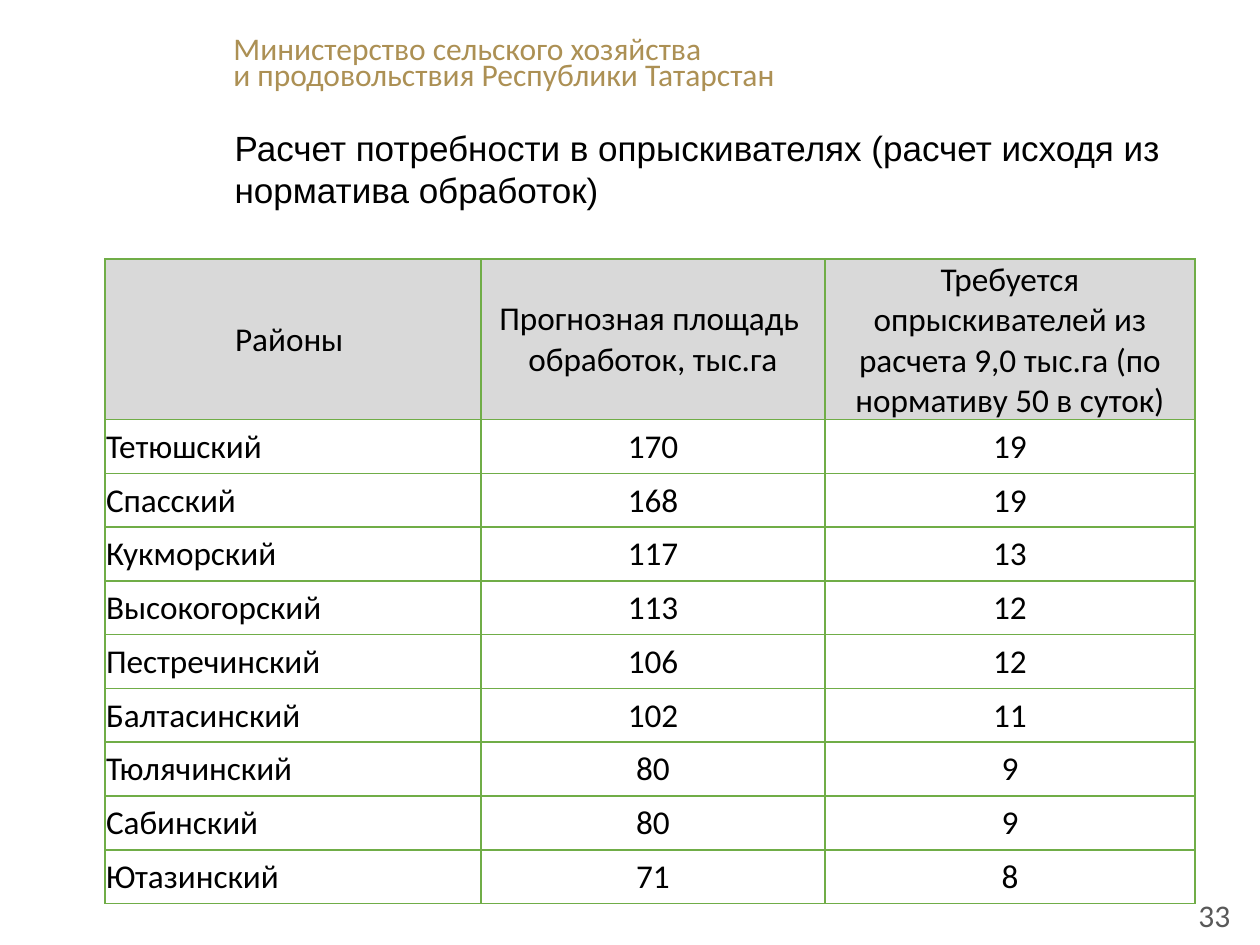
from dataclasses import dataclass

from lxml.etree import SubElement
from pptx import Presentation
from pptx.dml.color import RGBColor as RGB
from pptx.enum.text import MSO_ANCHOR as ANCHOR, MSO_AUTO_SIZE as AUTO, PP_ALIGN as ALIGN
from pptx.oxml.ns import qn
from pptx.util import Emu, Pt

EMU_PER_PX = 914400 / 126


@dataclass(frozen=True)
class Theme:
    text_font: str = "Calibri"
    title_font: str = "Arial"
    black: str = "000000"
    gold: str = "AC9054"
    gray: str = "595959"
    header_fill: str = "D9D9D9"
    border: str = "70AD47"
    title_size: int = 20
    label_size: int = 18
    table_size: int = 19


THEME = Theme()

MINISTRY = "Министерство сельского хозяйства\nи продовольствия Республики Татарстан"
TITLE = "Расчет потребности в опрыскивателях (расчет исходя из норматива обработок)"
HEADER = (
    "Районы ",
    "Прогнозная площадь \vобработок, тыс.га",
    "Требуется опрыскивателей из расчета 9,0 тыс.га (по нормативу 50 в суток)",
)
DISTRICTS = (
    ("Тетюшский", 170, 19),
    ("Спасский", 168, 19),
    ("Кукморский", 117, 13),
    ("Высокогорский", 113, 12),
    ("Пестречинский", 106, 12),
    ("Балтасинский", 102, 11),
    ("Тюлячинский", 80, 9),
    ("Сабинский", 80, 9),
    ("Ютазинский", 71, 8),
)


def px(n):
    return Emu(round(n * EMU_PER_PX))


def write(tf, text, font, size, color, align=ALIGN.LEFT, spacing=None):
    tf.text = text
    for p in tf.paragraphs:
        p.alignment = align
        if spacing:
            p.line_spacing = spacing
        for r in p.runs:
            r.font.name = font
            r.font.size = Pt(size)
            r.font.color.rgb = RGB.from_string(color)


def set_title(slide, x, y, w, h):
    sp = slide.shapes.title
    sp.left, sp.top, sp.width, sp.height = map(px, (x, y, w, h))
    tf = sp.text_frame
    tf.word_wrap = True
    tf.auto_size = AUTO.NONE
    tf.vertical_anchor = ANCHOR.TOP
    write(tf, TITLE, THEME.title_font, THEME.title_size, THEME.black)


def add_label(slide, text, color, x, y, w, h, wrap=True, spacing=None):
    tf = slide.shapes.add_textbox(*map(px, (x, y, w, h))).text_frame
    tf.word_wrap = wrap
    write(tf, text, THEME.text_font, THEME.label_size, color, spacing=spacing)


def add_borders(cell):
    """Draw all four sides; the lines must precede the cell fill in the XML."""
    tc_pr = cell._tc.get_or_add_tcPr()
    for side in ("lnL", "lnR", "lnT", "lnB"):
        ln = SubElement(tc_pr, qn(f"a:{side}"), w=str(Pt(1)))
        fill = SubElement(ln, qn("a:solidFill"))
        SubElement(fill, qn("a:srgbClr"), val=THEME.border)


def format_cell(cell, text, align, fill=None):
    add_borders(cell)
    if fill:
        cell.fill.solid()
        cell.fill.fore_color.rgb = RGB.from_string(fill)
    else:
        cell.fill.background()
    cell.margin_left = cell.margin_right = cell.margin_top = px(1)
    cell.margin_bottom = 0
    cell.vertical_anchor = ANCHOR.MIDDLE
    write(cell.text_frame, text, THEME.text_font, THEME.table_size, THEME.black, align)


def add_district_table(slide, x, y, col_widths, header_h, body_h):
    rows = (HEADER, *DISTRICTS)
    table = slide.shapes.add_table(
        len(rows), len(HEADER), px(x), px(y), px(sum(col_widths)), px(header_h + body_h)
    ).table
    for col, width in zip(table.columns, col_widths):
        col.width = px(width)
    for i, values in enumerate(rows):
        table.rows[i].height = px(body_h / len(DISTRICTS) if i else header_h)
        for j, value in enumerate(values):
            align = ALIGN.LEFT if i and j == 0 else ALIGN.CENTER
            fill = None if i else THEME.header_fill
            format_cell(table.cell(i, j), str(value), align, fill)


def main():
    prs = Presentation()
    prs.slide_width, prs.slide_height = px(1260), px(945)
    slide = prs.slides.add_slide(prs.slide_layouts[5])
    add_label(slide, MINISTRY, THEME.gold, 221, 33, 573, 68, wrap=False, spacing=0.7)
    set_title(slide, 222, 120, 954, 97)
    add_district_table(slide, 105, 259, (376, 344, 370), 160, 484)
    add_label(slide, "33", THEME.gray, 1186, 890, 63, 50)
    prs.save("out.pptx")


if __name__ == "__main__":
    main()
